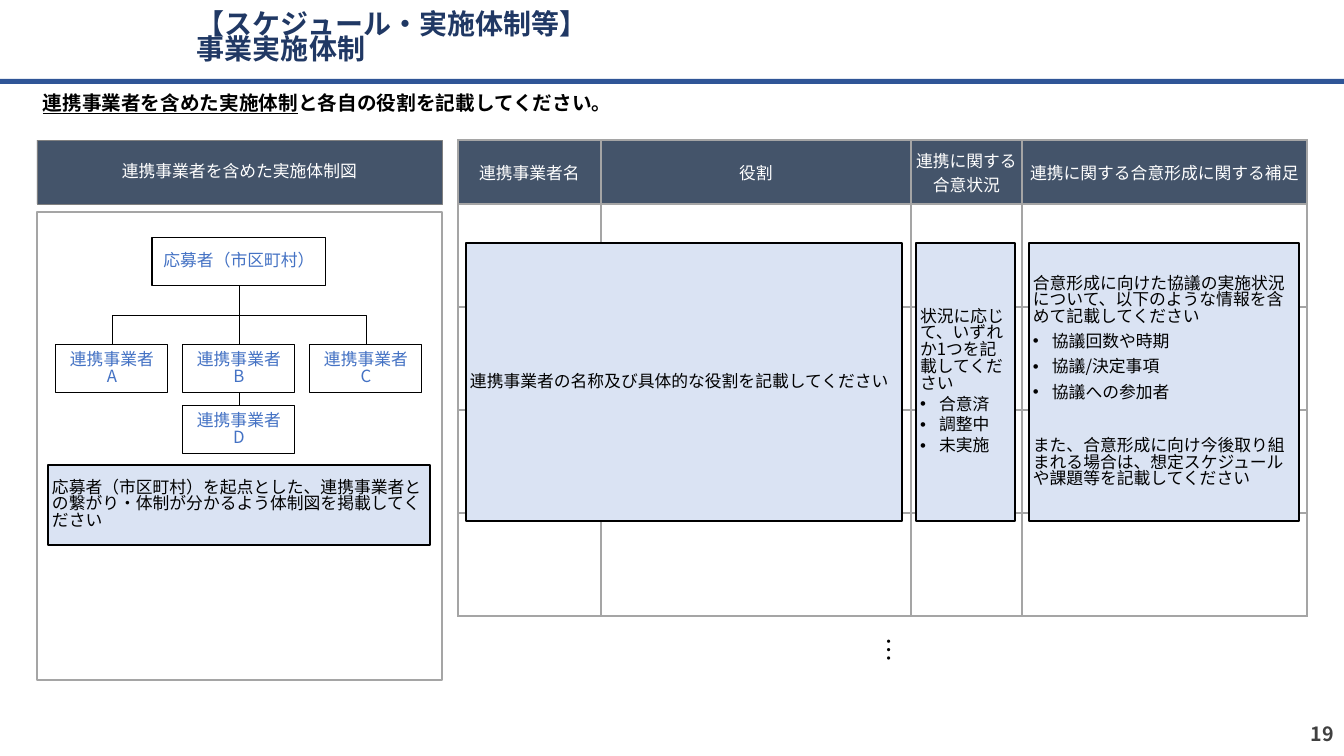
"""Build the project implementation structure slide."""
from lxml import etree
from pptx import Presentation
from pptx.dml.color import RGBColor
from pptx.enum.shapes import MSO_CONNECTOR, MSO_SHAPE
from pptx.enum.text import MSO_ANCHOR, PP_ALIGN
from pptx.oxml.ns import qn
from pptx.util import Pt

RECTANGLE, ROUNDED = MSO_SHAPE.RECTANGLE, MSO_SHAPE.ROUNDED_RECTANGLE
STRAIGHT = MSO_CONNECTOR.STRAIGHT
LEFT, CENTER, RIGHT = PP_ALIGN.LEFT, PP_ALIGN.CENTER, PP_ALIGN.RIGHT
TOP, MIDDLE = MSO_ANCHOR.TOP, MSO_ANCHOR.MIDDLE

FONT = "Noto Sans CJK JP"
EMU_PER_PX = 914400 / 100.8
TIGHT, TITLE_TIGHT = 0.83, 0.74

BLACK = RGBColor(0, 0, 0)
WHITE = RGBColor(255, 255, 255)
NAVY = RGBColor(0x20, 0x38, 0x64)
RULE_BLUE = RGBColor(0x2F, 0x55, 0x97)
NODE_BLUE = RGBColor(0x44, 0x72, 0xC4)
NOTE_BLUE = RGBColor(0xDA, 0xE3, 0xF3)
SLATE = RGBColor(0x44, 0x54, 0x6A)
DARK_GRAY = RGBColor(0x40, 0x40, 0x40)
MID_GRAY = RGBColor(0x80, 0x80, 0x80)
BORDER_GRAY = RGBColor(0xA5, 0xA5, 0xA5)

TITLE = "【スケジュール・実施体制等】\n事業実施体制"
LEAD = ["連携事業者を含めた実施体制", "と各自の役割を記載してください。"]
PAGE_NUMBER = "19"
DIAGRAM_HEADING = "連携事業者を含めた実施体制図"
HEADERS = ["連携事業者名", "役割", "連携に関する合意状況", "連携に関する合意形成に関する補足"]
COLUMN_WIDTHS = [143, 310, 111, 285]
ROW_HEIGHTS = [64, 103, 103, 103, 103]

# Each note: box, space before (pt), paragraphs as (text, bulleted, extra space).
NOTES = [
    ((48, 465, 382, 80), 6, [
        ("応募者（市区町村）を起点とした、連携事業者との繋がり・体制が分かるよう体制図を掲載してください", False, 0)]),
    ((466, 243, 436, 278), 6, [
        ("連携事業者の名称及び具体的な役割を記載してください", False, 0)]),
    ((916, 243, 99, 278), 3, [
        ("状況に応じて、いずれか1つを記載してください", False, 0),
        ("合意済", True, 0), ("調整中", True, 0), ("未実施", True, 0)]),
    ((1029, 243, 270, 278), 6, [
        ("合意形成に向けた協議の実施状況について、以下のような情報を含めて記載してください", False, 0),
        ("協議回数や時期", True, 0), ("協議/決定事項", True, 0), ("協議への参加者", True, 0),
        ("また、合意形成に向け今後取り組まれる場合は、想定スケジュールや課題等を記載してください", False, 20)]),
]

APPLICANT = "応募者（市区町村）"
CENTER_X, APPLICANT_TOP, PARTNER_TOP, SUB_TOP = 239, 238, 345, 406
APPLICANT_WIDTH, PARTNER_WIDTH, NODE_HEIGHT, PARTNER_STEP = 174, 112, 48, 127
PARTNERS = [("A", -1, PARTNER_TOP), ("B", 0, PARTNER_TOP),
            ("C", 1, PARTNER_TOP), ("D", 0, SUB_TOP)]


def px(value):
    return round(value * EMU_PER_PX)


def style_run(run, size, color, bold=False):
    font = run.font
    font.name, font.size, font.bold = FONT, Pt(size), bold
    font.color.rgb = color
    latin = run._r.get_or_add_rPr().find(qn("a:latin"))
    east_asian = etree.Element(qn("a:ea"), typeface=FONT)
    latin.addnext(east_asian)


def style_paragraph(paragraph, size, color, align=LEFT, bold=False, spacing=TIGHT):
    paragraph.alignment = align
    paragraph.line_spacing = spacing
    for run in paragraph.runs:
        style_run(run, size, color, bold)


def set_frame(text_frame, inset=4, anchor=MIDDLE):
    text_frame.word_wrap = True
    text_frame.vertical_anchor = anchor
    if inset is not None:
        text_frame.margin_left = text_frame.margin_right = px(inset)
        text_frame.margin_top = text_frame.margin_bottom = 0


def add_text(slide, box, text, size, color, align=LEFT, bold=False,
             spacing=TIGHT, inset=None, anchor=MIDDLE):
    text_frame = slide.shapes.add_textbox(*map(px, box)).text_frame
    set_frame(text_frame, inset, anchor)
    paragraph = text_frame.paragraphs[0]
    paragraph.text = text
    style_paragraph(paragraph, size, color, align, bold, spacing)
    return text_frame


def add_box(slide, box, fill=None, line=None, width=1, preset=RECTANGLE, text="", color=BLACK):
    shape = slide.shapes.add_shape(preset, *map(px, box))
    shape.shadow.inherit = False
    if fill is None:
        shape.fill.background()
    else:
        shape.fill.solid()
        shape.fill.fore_color.rgb = fill
    if line is None:
        shape.line.fill.background()
    else:
        shape.line.color.rgb = line
        shape.line.width = Pt(width)
    set_frame(shape.text_frame)
    if text:
        paragraph = shape.text_frame.paragraphs[0]
        paragraph.text = text
        style_paragraph(paragraph, 12, color, CENTER)
    return shape


def add_note(slide, box, space_before, lines):
    text_frame = add_box(slide, box, NOTE_BLUE, BLACK, 1.5).text_frame
    text_frame.text = "\n".join(text for text, _, _ in lines)
    for index, (paragraph, (_, bulleted, extra)) in enumerate(zip(text_frame.paragraphs, lines)):
        if bulleted:
            properties = paragraph._p.get_or_add_pPr()
            properties.set("marL", str(px(19)))
            properties.set("indent", str(px(-19)))
            etree.SubElement(properties, qn("a:buFont"), typeface="Arial")
            etree.SubElement(properties, qn("a:buChar"), char="•")
        style_paragraph(paragraph, 12, BLACK)
        if index:
            paragraph.space_before = Pt(space_before + extra)


def set_borders(cell):
    properties = cell._tc.get_or_add_tcPr()
    for index, side in enumerate(("lnL", "lnR", "lnT", "lnB")):
        border = etree.Element(qn(f"a:{side}"), w=str(Pt(1)))
        fill = etree.SubElement(border, qn("a:solidFill"))
        etree.SubElement(fill, qn("a:srgbClr"), val=str(BORDER_GRAY))
        properties.insert(index, border)


def add_partner_table(slide):
    box = (458, 140, sum(COLUMN_WIDTHS), sum(ROW_HEIGHTS))
    table = slide.shapes.add_table(len(ROW_HEIGHTS), len(HEADERS), *map(px, box)).table
    table.first_row = table.horz_banding = False
    for column, width in zip(table.columns, COLUMN_WIDTHS):
        column.width = px(width)
    for row, height in zip(table.rows, ROW_HEIGHTS):
        row.height = px(height)
    for cell in table.iter_cells():
        cell.fill.background()
        set_borders(cell)
    for cell, header in zip(table.rows[0].cells, HEADERS):
        cell.fill.solid()
        cell.fill.fore_color.rgb = SLATE
        cell.vertical_anchor = MIDDLE
        cell.margin_left = cell.margin_right = px(4)
        cell.margin_top = cell.margin_bottom = 0
        cell.text = header
        style_paragraph(cell.text_frame.paragraphs[0], 12, WHITE, CENTER, spacing=1.0)


def connect(slide, upper, lower):
    connector = slide.shapes.add_connector(STRAIGHT, 0, 0, 0, 0)
    connector.begin_connect(upper, 2)
    connector.end_connect(lower, 0)
    connector.line.color.rgb = BLACK
    connector.line.width = Pt(0.5)
    etree.SubElement(connector._element.spPr, qn("a:effectLst"))


def add_diagram(slide):
    applicant_box = (CENTER_X - APPLICANT_WIDTH // 2, APPLICANT_TOP, APPLICANT_WIDTH, NODE_HEIGHT)
    applicant = add_box(slide, applicant_box, None, BLACK, 0.75, text=APPLICANT, color=NODE_BLUE)
    nodes = {}
    for name, offset, top in PARTNERS:
        left = CENTER_X + offset * PARTNER_STEP - PARTNER_WIDTH // 2
        nodes[name] = add_box(slide, (left, top, PARTNER_WIDTH, NODE_HEIGHT), None, BLACK, 0.75,
                              text=f"連携事業者\n{name}", color=NODE_BLUE)
    connect(slide, applicant, nodes["B"])
    connect(slide, nodes["B"], nodes["D"])
    branch_y = (APPLICANT_TOP + NODE_HEIGHT + PARTNER_TOP) // 2
    for direction in (-1, 1):
        end_x = CENTER_X + direction * PARTNER_STEP
        builder = slide.shapes.build_freeform(CENTER_X, branch_y, scale=EMU_PER_PX)
        builder.add_line_segments([(end_x, branch_y), (end_x, PARTNER_TOP)], close=False)
        branch = builder.convert_to_shape()
        branch.shadow.inherit = False
        branch.fill.background()
        branch.line.color.rgb = BLACK
        branch.line.width = Pt(0.5)


def main():
    presentation = Presentation()
    presentation.slide_width, presentation.slide_height = px(1344), px(756)
    slide = presentation.slides.add_slide(presentation.slide_layouts[6])
    add_box(slide, (0, 79, 1344, 5), RULE_BLUE)
    add_text(slide, (187, 0, 1063, 79), TITLE, 20, NAVY, bold=True, spacing=TITLE_TIGHT)
    add_text(slide, (1041, 716, 303, 40), PAGE_NUMBER, 14, DARK_GRAY, RIGHT, True)
    lead = add_box(slide, (37, 85, 1270, 39), preset=ROUNDED).text_frame.paragraphs[0]
    for text in LEAD:
        lead.add_run().text = text
    style_paragraph(lead, 14, BLACK, bold=True)
    lead.runs[0].font.underline = True
    add_partner_table(slide)
    add_box(slide, (37, 140, 405, 64), SLATE, MID_GRAY, 0.25, text=DIAGRAM_HEADING, color=WHITE)
    add_box(slide, (37, 212, 405, 468), None, BORDER_GRAY)
    add_diagram(slide)
    for box, space_before, lines in NOTES:
        add_note(slide, box, space_before, lines)
    ellipsis = add_text(slide, (871, 638, 38, 40), "…", 18, BLACK, CENTER,
                        spacing=1.0, inset=4, anchor=TOP)
    ellipsis._txBody.bodyPr.set("vert", "eaVert")
    presentation.save("out.pptx")


if __name__ == "__main__":
    main()
